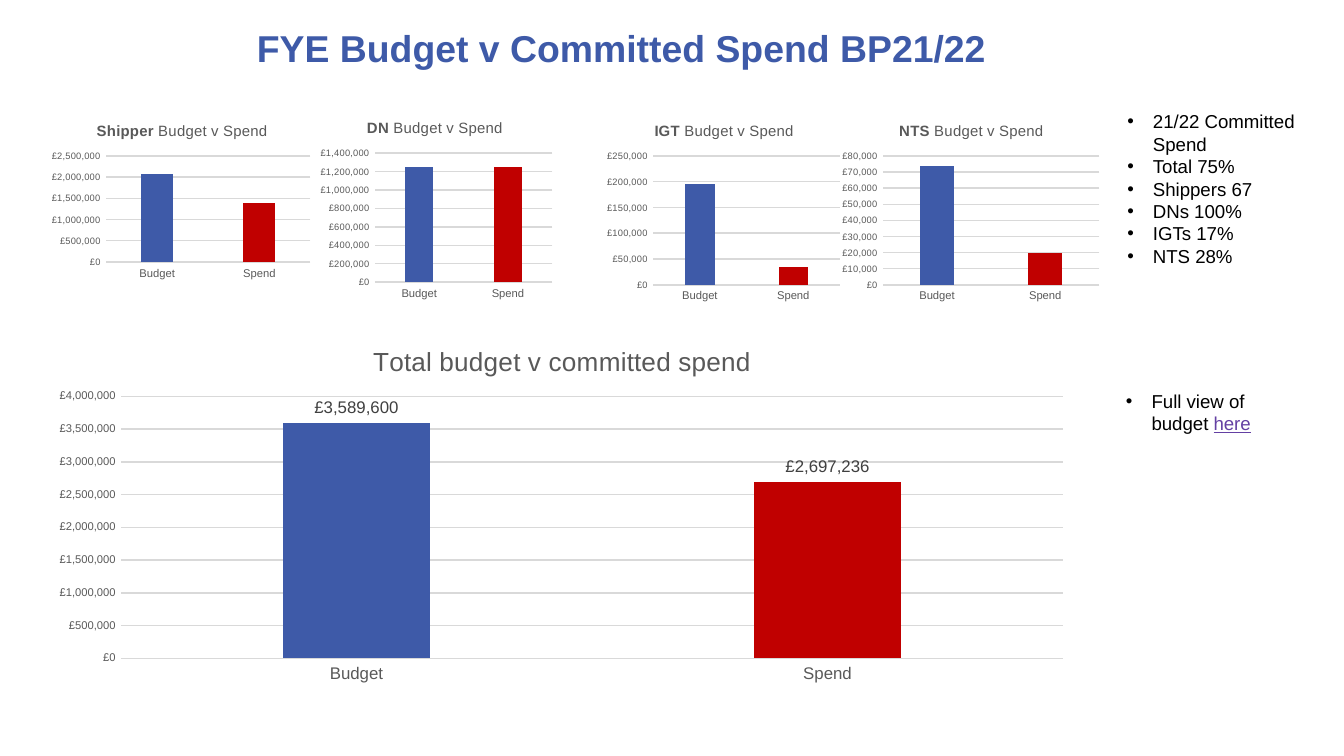
from lxml import etree
from pptx import Presentation
from pptx.chart.data import CategoryChartData
from pptx.dml.color import RGBColor
from pptx.enum.chart import XL_CHART_TYPE, XL_LABEL_POSITION, XL_TICK_MARK
from pptx.enum.text import MSO_ANCHOR, PP_ALIGN
from pptx.oxml.ns import qn
from pptx.util import Inches, Pt

COLUMN = XL_CHART_TYPE.COLUMN_CLUSTERED
OUTSIDE_END = XL_LABEL_POSITION.OUTSIDE_END
NO_TICK = XL_TICK_MARK.NONE
MIDDLE = MSO_ANCHOR.MIDDLE
CENTER, LEFT = PP_ALIGN.CENTER, PP_ALIGN.LEFT

SLIDE_WIDTH = Inches(10)
SLIDE_HEIGHT = SLIDE_WIDTH * 9 // 16

COLORS = {
    "budget": "3E5AA8", "spend": "C00000", "label": "595959", "value": "404040",
    "grid": "D9D9D9", "text": "000000", "link": "6440A3",
}
FONT = "Arial"
POUNDS = '"£"#,##0'
CATEGORIES = ["Budget", "Spend"]

TITLE = "FYE Budget v Committed Spend BP21/22"
SUMMARY = ["21/22 Committed Spend", "Total 75%", "Shippers 67",
           "DNs 100%", "IGTs 17%", "NTS 28%"]

# box and plot: left, top, width, height; heading_at: left, top (inches on the slide)
SMALL = {"heading_size": 8, "category_size": 6, "scale_size": 5, "value_size": None}
LARGE = {"heading_size": 14, "category_size": 9, "scale_size": 6, "value_size": 9}
CHARTS = [
    {"group": "DN", "heading": " Budget v Spend", "values": (1250000, 1250000),
     "top_value": 1400000, "step": 200000, "box": (2.35, 0.77, 1.8, 1.5),
     "plot": (2.79, 1.14, 1.32, 0.96), "heading_at": (2.7, 0.84), **SMALL},
    {"group": "IGT", "heading": " Budget v Spend", "values": (195000, 34000),
     "top_value": 250000, "step": 50000, "box": (4.49, 0.79, 1.8, 1.5),
     "plot": (4.86, 1.16, 1.39, 0.96), "heading_at": (4.84, 0.86), **SMALL},
    {"group": "", "heading": "Total budget v committed spend",
     "values": (3589600, 2697236), "top_value": 4000000, "step": 500000,
     "box": (0.29, 2.42, 7.78, 2.72), "plot": (0.9, 2.95, 7.01, 1.95),
     "heading_at": (2.74, 2.53), **LARGE},
    {"group": "Shipper", "heading": " Budget v Spend", "values": (2070000, 1390000),
     "top_value": 2500000, "step": 500000, "box": (0.35, 0.79, 2, 1.32),
     "plot": (0.79, 1.16, 1.52, 0.79), "heading_at": (0.69, 0.86), **SMALL},
    {"group": "NTS", "heading": " Budget v Spend", "values": (74000, 20000),
     "top_value": 80000, "step": 10000, "box": (6.24, 0.79, 1.99, 1.5),
     "plot": (6.57, 1.16, 1.61, 0.96), "heading_at": (6.66, 0.86), **SMALL},
]


def style(font, size, color, bold=False, underline=False):
    font.name, font.size, font.bold = FONT, Pt(size), bold
    font.color.rgb = RGBColor.from_string(COLORS[color])
    if underline:
        font.underline = True


def add_text(slide, box, paragraphs, size=10, color="text", bold=False,
             align=LEFT, anchor=None, bullet=False):
    """Each paragraph is a list of (text, format overrides) runs."""
    frame = slide.shapes.add_textbox(*map(Inches, box)).text_frame
    frame.word_wrap = True
    if anchor is not None:
        frame.vertical_anchor = anchor
    for number, runs in enumerate(paragraphs):
        paragraph = frame.add_paragraph() if number else frame.paragraphs[0]
        paragraph.alignment = align
        if bullet:
            properties = paragraph._p.get_or_add_pPr()
            properties.set("marL", str(Inches(0.19)))
            properties.set("indent", str(-Inches(0.19)))
            etree.SubElement(properties, qn("a:buFont")).set("typeface", FONT)
            etree.SubElement(properties, qn("a:buChar")).set("char", "•")
        for text, overrides in runs:
            run = paragraph.add_run()
            run.text = text
            style(run.font, **{"size": size, "color": color, "bold": bold, **overrides})


def place(part, box, target, inner=False):
    """Fix a chart title or plot area at inches on the slide."""
    for old in part.findall(qn("c:layout")):
        part.remove(old)
    layout = etree.Element(qn("c:layout"))
    manual = etree.SubElement(layout, qn("c:manualLayout"))
    entries = [("layoutTarget", "inner")] if inner else []
    entries += [("xMode", "edge"), ("yMode", "edge")]
    left, top, width, height = box
    entries += [("x", (target[0] - left) / width), ("y", (target[1] - top) / height)]
    if inner:
        entries += [("w", target[2] / width), ("h", target[3] / height)]
    for tag, value in entries:
        etree.SubElement(manual, qn("c:" + tag)).set("val", str(value))
    text = part.find(qn("c:tx"))
    part.insert(0 if text is None else 1, layout)


def draw_line(line):
    line.color.rgb = RGBColor.from_string(COLORS["grid"])
    line.width = Pt(0.75)


def add_column_chart(slide, item):
    data = CategoryChartData(number_format=POUNDS)
    data.categories = CATEGORIES
    data.add_series("Series 1", item["values"])
    chart = slide.shapes.add_chart(COLUMN, *map(Inches, item["box"]), data).chart
    style(chart.font, 10, "text")
    chart.has_legend = False

    heading = chart.chart_title.text_frame.paragraphs[0]
    for text, bold in ((item["group"], True), (item["heading"], False)):
        if text:
            run = heading.add_run()
            run.text = text
            style(run.font, item["heading_size"], "label", bold)
    place(chart.chart_title._element, item["box"], item["heading_at"])
    place(chart._chartSpace.chart.plotArea, item["box"], item["plot"], inner=True)

    names, scale = chart.category_axis, chart.value_axis
    for axis, size in ((names, item["category_size"]), (scale, item["scale_size"])):
        axis.major_tick_mark = axis.minor_tick_mark = NO_TICK
        style(axis.tick_labels.font, size, "label")
    draw_line(names.format.line)
    scale.format.line.fill.background()
    scale.minimum_scale, scale.maximum_scale = 0, item["top_value"]
    scale.major_unit = item["step"]
    scale.has_major_gridlines = True
    draw_line(scale.major_gridlines.format.line)
    scale.tick_labels.number_format = POUNDS
    scale.tick_labels.number_format_is_linked = False

    plot = chart.plots[0]
    plot.gap_width, plot.overlap, plot.vary_by_categories = 219, -27, False
    series = plot.series[0]
    for bar, color in ((series, "budget"), (series.points[1], "spend")):
        bar.format.fill.solid()
        bar.format.fill.fore_color.rgb = RGBColor.from_string(COLORS[color])
    if item["value_size"]:
        labels = series.data_labels
        labels.show_value = True
        labels.position = OUTSIDE_END
        labels.number_format = POUNDS
        labels.number_format_is_linked = False
        style(labels.font, item["value_size"], "value")


def main():
    deck = Presentation()
    deck.slide_width, deck.slide_height = SLIDE_WIDTH, SLIDE_HEIGHT
    slide = deck.slides.add_slide(deck.slide_layouts[6])
    add_text(slide, (-0.2, 0.13, 9.65, 0.45), [[(TITLE, {})]], size=20,
             color="budget", bold=True, align=CENTER, anchor=MIDDLE)
    for item in CHARTS:
        add_column_chart(slide, item)
    add_text(slide, (8.29, 0.77, 1.54, 1.28), [[(line, {})] for line in SUMMARY],
             bullet=True)
    add_text(slide, (8.28, 2.85, 1.5, 0.45),
             [[("Full view of budget ", {}), ("here", {"color": "link", "underline": True})]],
             bullet=True)
    deck.save("out.pptx")


if __name__ == "__main__":
    main()
